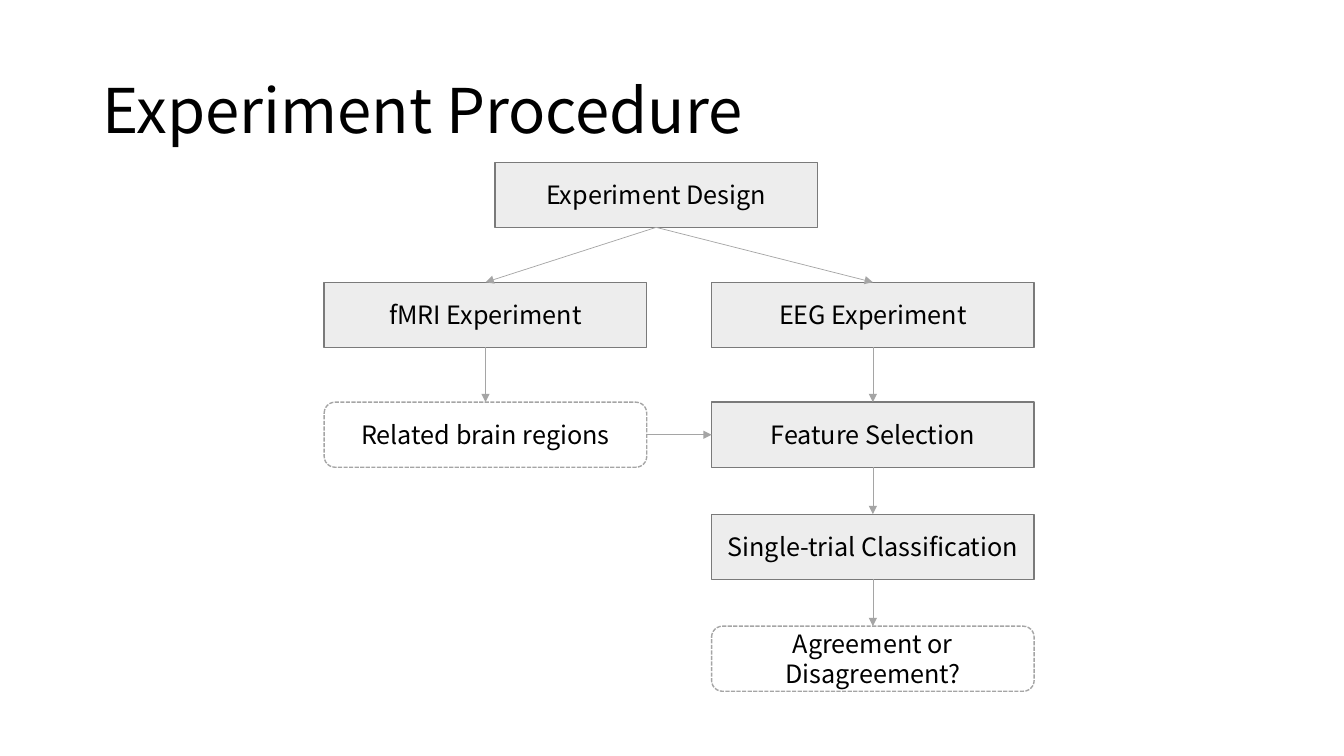
from lxml.etree import SubElement
from pptx import Presentation
from pptx.dml.color import RGBColor
from pptx.enum.dml import MSO_LINE
from pptx.enum.shapes import MSO_CONNECTOR, MSO_SHAPE
from pptx.enum.text import MSO_ANCHOR, MSO_AUTO_SIZE, PP_ALIGN
from pptx.oxml.ns import qn
from pptx.util import Pt

TOP, LEFT, BOTTOM, RIGHT = range(4)


def color(hex_code):
    return RGBColor.from_string(hex_code)


class FlowSlide:
    FONT = "Noto Sans CJK KR"
    TEXT, STEP_FILL, STEP_LINE = "000000", "EDEDED", "7A7A7A"
    RESULT_FILL, ARROW = "FFFFFF", "A5A5A5"
    BOX_WIDTH, BOX_HEIGHT = 230.4, 46.5

    def __init__(self, presentation):
        self.slide = presentation.slides.add_slide(presentation.slide_layouts[5])

    def set_text(self, frame, text, size, alignment):
        frame.text = text
        frame.word_wrap = True
        frame.auto_size = MSO_AUTO_SIZE.NONE
        frame.vertical_anchor = MSO_ANCHOR.MIDDLE
        paragraph = frame.paragraphs[0]
        paragraph.alignment = alignment
        paragraph.font.name = self.FONT
        paragraph.font.size = Pt(size)
        paragraph.font.color.rgb = color(self.TEXT)
        return paragraph

    def title(self, text, left, top, width, height):
        heading = self.slide.shapes.title
        heading.left, heading.top = Pt(left), Pt(top)
        heading.width, heading.height = Pt(width), Pt(height)
        self.set_text(heading.text_frame, text, 44, PP_ALIGN.LEFT).line_spacing = 0.9

    def box(self, preset, text, left, top, fill, line):
        box = self.slide.shapes.add_shape(
            preset, Pt(left), Pt(top), Pt(self.BOX_WIDTH), Pt(self.BOX_HEIGHT))
        box.shadow.inherit = False
        box.fill.solid()
        box.fill.fore_color.rgb = color(fill)
        box.line.color.rgb = color(line)
        box.line.width = Pt(1)
        self.set_text(box.text_frame, text, 18, PP_ALIGN.CENTER)
        return box

    def step(self, text, left, top):
        return self.box(MSO_SHAPE.RECTANGLE, text, left, top,
                        self.STEP_FILL, self.STEP_LINE)

    def result(self, text, left, top):
        box = self.box(MSO_SHAPE.ROUNDED_RECTANGLE, text, left, top,
                       self.RESULT_FILL, self.ARROW)
        box.line.dash_style = MSO_LINE.SQUARE_DOT
        return box

    def arrow(self, source, target, exit_side=BOTTOM, entry_side=TOP):
        arrow = self.slide.shapes.add_connector(MSO_CONNECTOR.STRAIGHT, 0, 0, 0, 0)
        arrow.begin_connect(source, exit_side)
        arrow.end_connect(target, entry_side)
        arrow.line.color.rgb = color(self.ARROW)
        arrow.line.width = Pt(0.5)
        properties = arrow._element.spPr
        SubElement(properties.find(qn("a:ln")), qn("a:tailEnd"), type="triangle")
        SubElement(properties, qn("a:effectLst"))


def main():
    presentation = Presentation()
    presentation.slide_width, presentation.slide_height = Pt(960), Pt(540)
    flow = FlowSlide(presentation)
    flow.title("Experiment Procedure", 66, 28.8, 828, 104.4)

    fmri_left, eeg_left = 231.6, 508.3
    design_top, experiment_top, feature_top = (115.9 + 85.7 * row for row in range(3))
    classification_top, agreement_top = (feature_top + 80 * row for row in (1, 2))

    design = flow.step("Experiment Design", 353.5, design_top)
    fmri = flow.step("fMRI Experiment", fmri_left, experiment_top)
    eeg = flow.step("EEG Experiment", eeg_left, experiment_top)
    features = flow.step("Feature Selection", eeg_left, feature_top)
    classification = flow.step("Single-trial Classification", eeg_left, classification_top)
    regions = flow.result("Related brain regions", fmri_left, feature_top)
    agreement = flow.result("Agreement or Disagreement?", eeg_left, agreement_top)

    for source, target in ((design, fmri), (design, eeg), (eeg, features),
                           (features, classification), (fmri, regions),
                           (classification, agreement)):
        flow.arrow(source, target)
    flow.arrow(regions, features, RIGHT, LEFT)

    presentation.save("out.pptx")


if __name__ == "__main__":
    main()
